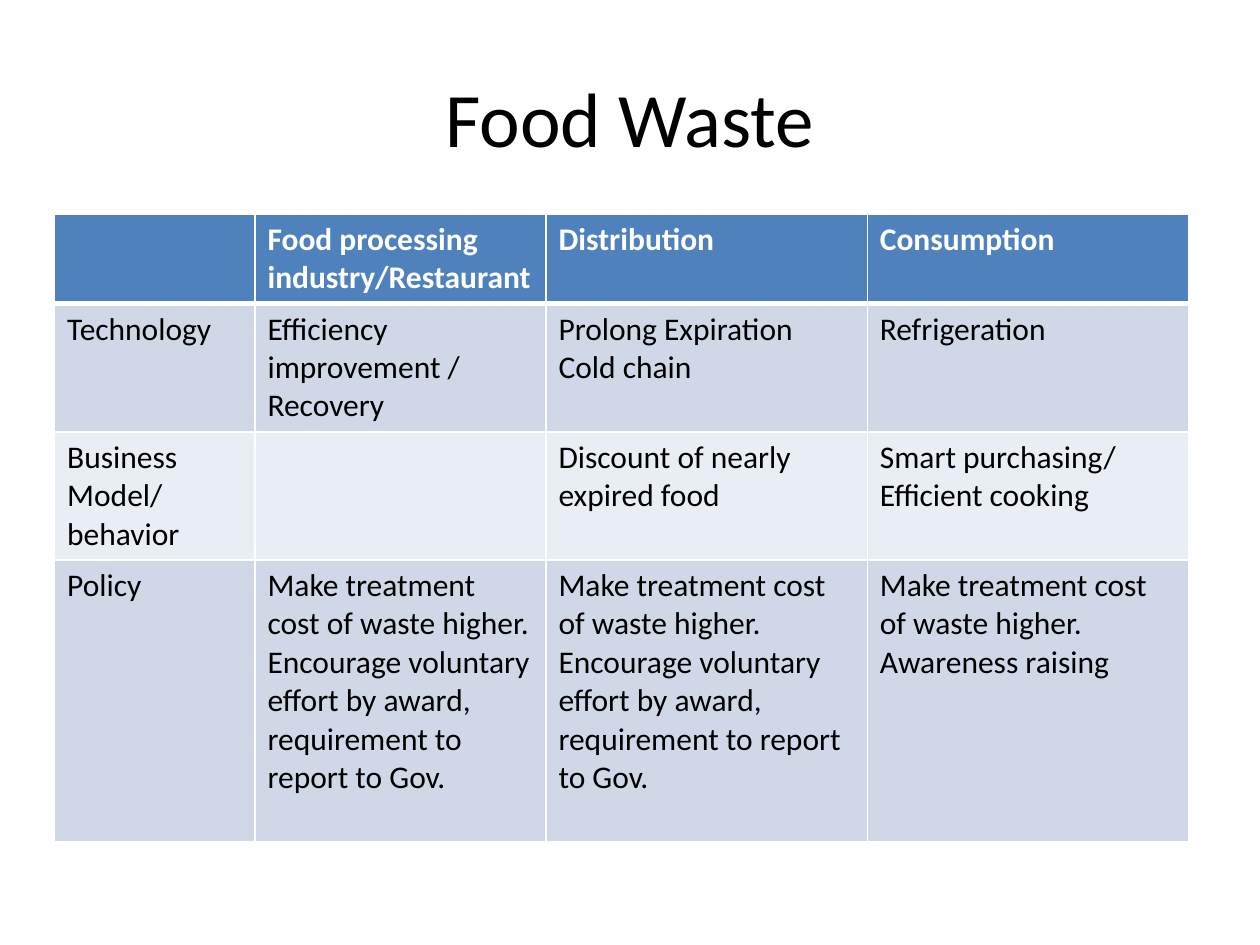
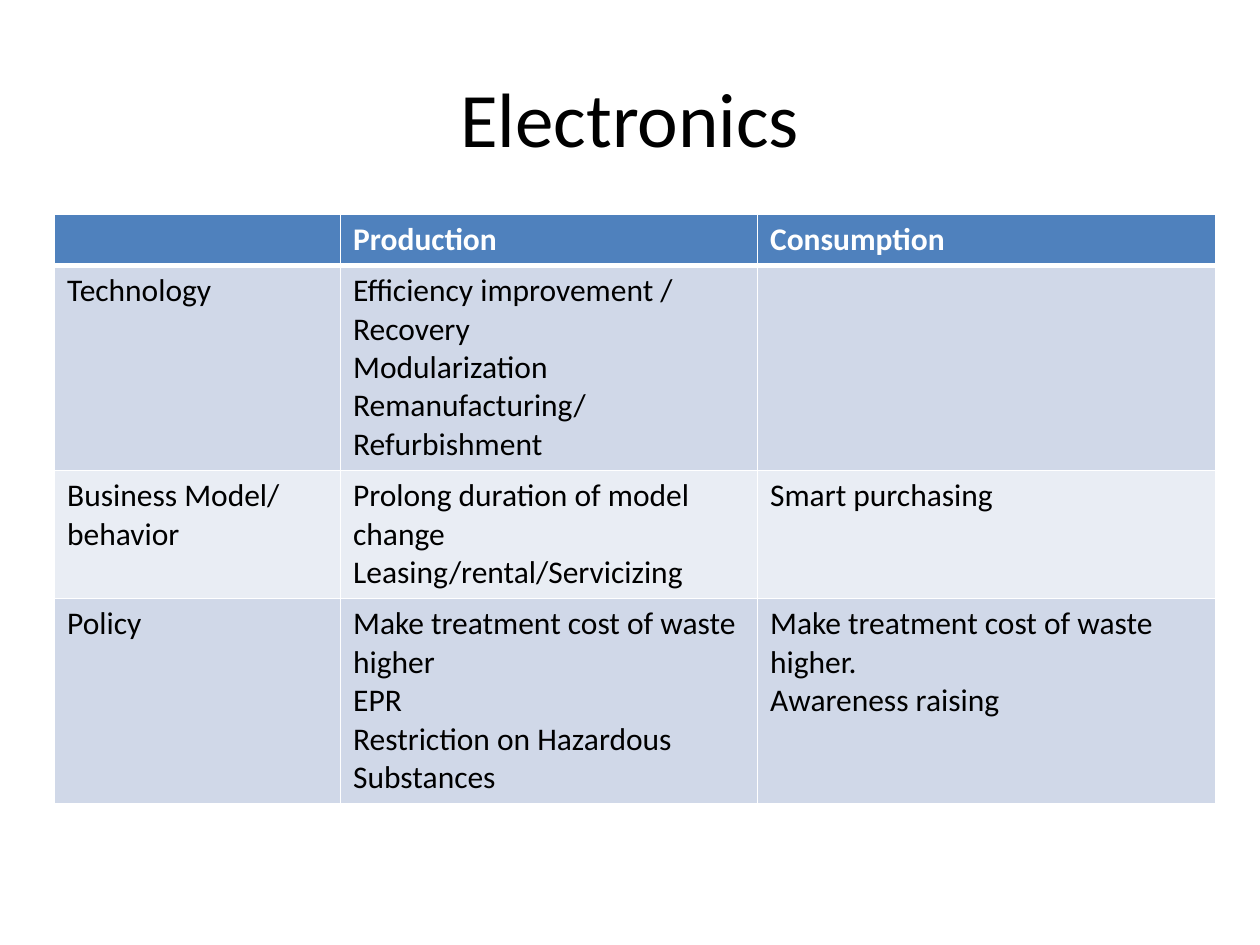
from dataclasses import dataclass

from lxml.etree import SubElement
from pptx import Presentation
from pptx.dml.color import RGBColor
from pptx.enum.text import MSO_ANCHOR, PP_ALIGN
from pptx.oxml.ns import qn
from pptx.util import Pt

FONT = "Calibri"
COLORS = {
    "title": "000000",
    "text": "000000",
    "head": "4F81BD",
    "headtext": "FFFFFF",
    "odd": "D0D8E8",
    "even": "E9EDF4",
    "rule": "FFFFFF",
}
LEFT, TOP = 31.2, 122.4
LINE, PAD = 22, 7.2
THIN, THICK = 1, 3
COST = "Make treatment cost of waste higher."
EFFORT = "Encourage voluntary effort by award, requirement to report to Gov."
AWARE = f"{COST}\nAwareness raising"
REPORT = f"{COST}\n{EFFORT}"
MODEL = "Business Model/ behavior"


@dataclass
class Row:
    lines: int
    cells: list[str]


@dataclass
class Page:
    title: str
    widths: list[float]
    rows: list[Row]


PAGES = [
    Page("Food Waste", [114.5, 166.3, 183.6, 183.6], [
        Row(2, ["", "Food processing industry/Restaurant", "Distribution", "Consumption"]),
        Row(3, ["Technology", "Efficiency improvement / Recovery",
                "Prolong Expiration\nCold chain", "Refrigeration"]),
        Row(3, [MODEL, "", "Discount of nearly expired food",
                "Smart purchasing/\nEfficient cooking"]),
        Row(7, ["Policy", REPORT, REPORT, AWARE]),
    ]),
    Page("Electronics", [163.4, 238.3, 262], [
        Row(1, ["", "Production", "Consumption"]),
        Row(5, ["Technology",
                "Efficiency improvement / Recovery\nModularization\nRemanufacturing/Refurbishment",
                ""]),
        Row(3, [MODEL,
                "Prolong duration of model change\nLeasing/rental/Servicizing",
                "Smart purchasing"]),
        Row(5, ["Policy",
                "Make treatment cost of waste higher\nEPR\nRestriction on Hazardous Substances",
                AWARE]),
    ]),
]


def color(name: str) -> RGBColor:
    return RGBColor.from_string(COLORS[name])


def style(para, size: float, name: str, bold: bool = False) -> None:
    font = para.font
    font.name, font.size, font.bold = FONT, Pt(size), bold
    font.color.rgb = color(name)


def border(cell, top: float, bottom: float) -> None:
    props = cell._tc.get_or_add_tcPr()
    sides = {"lnL": THIN, "lnR": THIN, "lnT": top, "lnB": bottom}
    for index, (side, width) in enumerate(sides.items()):
        line = SubElement(props, qn(f"a:{side}"), w=str(Pt(width)))
        fill = SubElement(line, qn("a:solidFill"))
        SubElement(fill, qn("a:srgbClr"), val=COLORS["rule"])
        props.insert(index, line)


def add_title(slide, text: str) -> None:
    frame = slide.shapes.add_textbox(Pt(36), Pt(21.6), Pt(648), Pt(90)).text_frame
    frame.word_wrap = True
    frame.vertical_anchor = MSO_ANCHOR.MIDDLE
    frame.text = text
    para = frame.paragraphs[0]
    para.alignment = PP_ALIGN.CENTER
    style(para, 44, "title")


def fill_cell(cell, text: str, index: int) -> None:
    head = index == 0
    cell.text = text
    for para in cell.text_frame.paragraphs:
        style(para, 18, "headtext" if head else "text", head)
    cell.fill.solid()
    cell.fill.fore_color.rgb = color("head" if head else "odd" if index % 2 else "even")
    border(cell, THICK if index == 1 else THIN, THICK if head else THIN)


def add_grid(slide, page: Page) -> None:
    heights = [row.lines * LINE + PAD for row in page.rows]
    table = slide.shapes.add_table(
        len(page.rows), len(page.widths), Pt(LEFT), Pt(TOP),
        Pt(sum(page.widths)), Pt(sum(heights))).table
    for column, width in zip(table.columns, page.widths):
        column.width = Pt(width)
    for index, (row, height) in enumerate(zip(page.rows, heights)):
        table.rows[index].height = Pt(height)
        for cell, text in zip(table.rows[index].cells, row.cells):
            fill_cell(cell, text, index)


def main() -> None:
    deck = Presentation()
    deck.slide_width, deck.slide_height = Pt(720), Pt(540)
    for page in PAGES:
        slide = deck.slides.add_slide(deck.slide_layouts[6])
        add_title(slide, page.title)
        add_grid(slide, page)
    deck.save("out.pptx")


if __name__ == "__main__":
    main()
